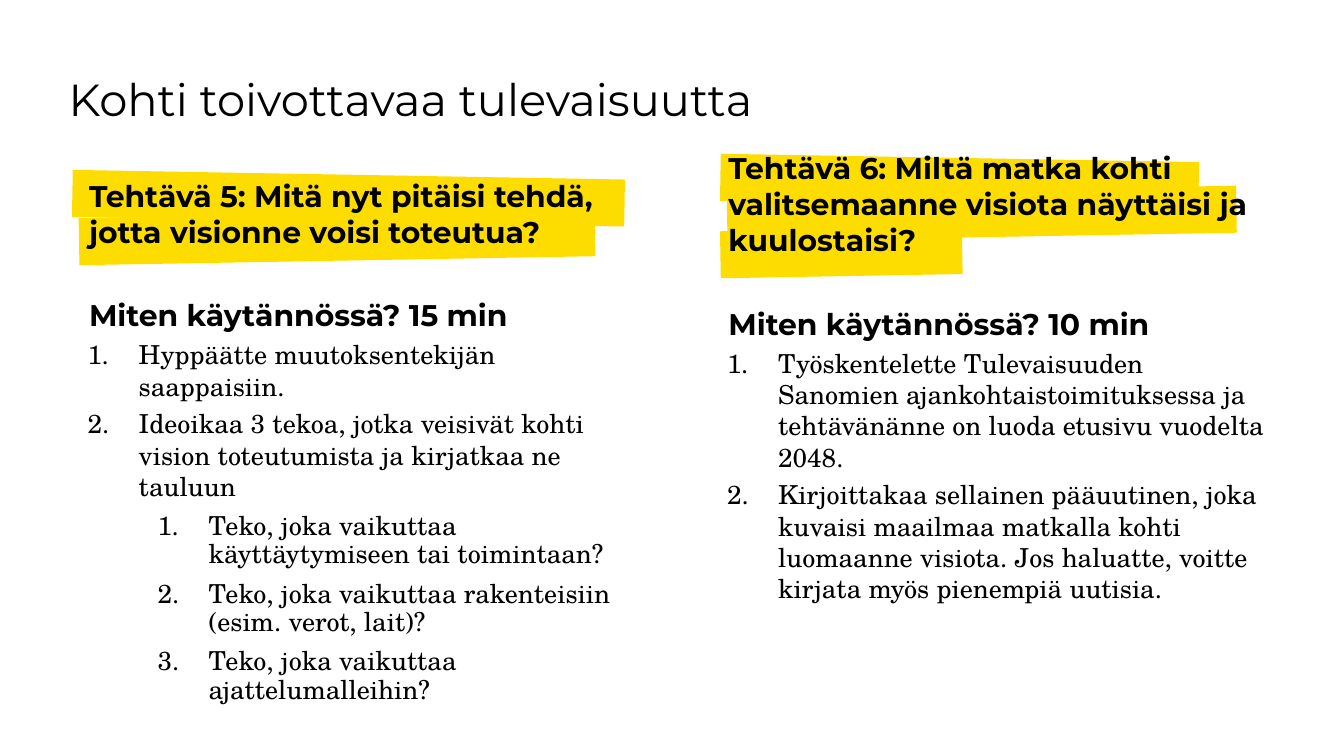
import pptx
import pptx.dml.color
import pptx.enum.shapes
import pptx.enum.text
import pptx.oxml.ns
import pptx.util
from lxml import etree

COLORS = {"text": "000000", "highlight": "FDDD00"}
# The grid has 100 columns; one cell is a tenth of an inch.
CELL = pptx.util.Inches(0.1)
COLUMNS, ROWS = 100, 56.25
STRIP_ROWS = 3.5

FONTS = {
    "title": {"name": "Montserrat", "size": pptx.util.Pt(24), "bold": False},
    "heading": {"name": "Montserrat", "size": pptx.util.Pt(16), "bold": True},
    "list": {"name": "TeX Gyre Schola", "size": pptx.util.Pt(14), "bold": False},
}
# Each style: font, left indent and hanging indent in inches, paragraph format
STYLES = {
    "task": ("heading", 0.14, 0, {}),
    "method": ("heading", 0.14, 0, {"space_before": pptx.util.Pt(25.7)}),
    "step": ("list", 0.51, -0.38, {"space_before": pptx.util.Pt(3.2)}),
    "substep": ("list", 1.03, -0.38, {
        "level": 1, "line_spacing": 0.9, "space_before": pptx.util.Pt(6)}),
}
FRAME = {"margin_left": 0, "margin_top": 0, "margin_right": 0,
         "margin_bottom": 0, "word_wrap": True}

# Strips: column and row offset in the box, width in columns, rotation
TASKS = [
    {
        "box": (52.8, 11.15, 41.3, 32.1),
        "strips": [(0.8, 5.9, 18, -1), (1.3, 3, 37.9, -1), (0.8, 0.6, 35.6, 1)],
        "text": [
            ("task", "Tehtävä 6: Miltä matka kohti valitsemaanne visiota "
                     "näyttäisi ja kuulostaisi?"),
            ("method", "Miten käytännössä? 10 min"),
            ("step", "Työskentelette Tulevaisuuden Sanomien ajankohtaistoimituksessa "
                     "ja tehtävänänne on luoda etusivu vuodelta 2048."),
            ("step", "Kirjoittakaa sellainen pääuutinen, joka kuvaisi maailmaa "
                     "matkalla kohti luomaanne visiota. Jos haluatte, voitte "
                     "kirjata myös pienempiä uutisia."),
        ],
    },
    {
        "box": (5.23, 13.2, 41.3, 38.2),
        "strips": [(0.65, 2.7, 38.4, -1), (0.15, -0.2, 41.1, 1)],
        "text": [
            ("task", "Tehtävä 5: Mitä nyt pitäisi tehdä, jotta visionne voisi toteutua?"),
            ("method", "Miten käytännössä? 15 min"),
            ("step", "Hyppäätte muutoksentekijän saappaisiin."),
            ("step", "Ideoikaa 3 tekoa, jotka veisivät kohti vision toteutumista "
                     "ja kirjatkaa ne tauluun"),
            ("substep", "Teko, joka vaikuttaa käyttäytymiseen tai toimintaan?"),
            ("substep", "Teko, joka vaikuttaa rakenteisiin (esim. verot, lait)?"),
            ("substep", "Teko, joka vaikuttaa ajattelumalleihin?"),
        ],
    },
]


def cells(*values):
    return [round(value * CELL) for value in values]


def color(name):
    return pptx.dml.color.RGBColor.from_string(COLORS[name])


def apply_format(target, values):
    for name, value in values.items():
        setattr(target, name, value)


def add_text(paragraph, text, font):
    run = paragraph.add_run()
    run.text = text
    apply_format(run.font, FONTS[font])
    run.font.color.rgb = color("text")


def number_paragraph(properties):
    bullet_color = etree.SubElement(properties, pptx.oxml.ns.qn("a:buClr"))
    etree.SubElement(bullet_color, pptx.oxml.ns.qn("a:srgbClr"), val=COLORS["text"])
    etree.SubElement(properties, pptx.oxml.ns.qn("a:buAutoNum"), type="arabicPeriod")


def place_title(title, box, text):
    left, top, width, height = cells(*box)
    apply_format(title, {"left": left, "top": top, "width": width, "height": height})
    apply_format(title.text_frame, FRAME | {
        "vertical_anchor": pptx.enum.text.MSO_ANCHOR.MIDDLE,
        "auto_size": pptx.enum.text.MSO_AUTO_SIZE.NONE})
    paragraph = title.text_frame.paragraphs[0]
    paragraph.alignment = pptx.enum.text.PP_ALIGN.LEFT
    add_text(paragraph, text, "title")


def add_task(slide, box, strips, text):
    # Highlighter strips behind the task heading
    for column, row, width, rotation in strips:
        strip = slide.shapes.add_shape(
            pptx.enum.shapes.MSO_SHAPE.RECTANGLE,
            *cells(box[0] + column, box[1] + row, width, STRIP_ROWS))
        strip.rotation = rotation
        strip.shadow.inherit = False
        strip.fill.solid()
        strip.fill.fore_color.rgb = color("highlight")
        strip.line.fill.background()

    # Heading and numbered instructions
    frame = slide.shapes.add_textbox(*cells(*box)).text_frame
    apply_format(frame, FRAME | {
        "auto_size": pptx.enum.text.MSO_AUTO_SIZE.SHAPE_TO_FIT_TEXT})
    for index, (style, words) in enumerate(text):
        font, indent, hanging, values = STYLES[style]
        paragraph = frame.add_paragraph() if index else frame.paragraphs[0]
        apply_format(paragraph, values)
        properties = paragraph._p.get_or_add_pPr()
        properties.set("marL", str(pptx.util.Inches(indent)))
        properties.set("indent", str(pptx.util.Inches(hanging)))
        if hanging:
            number_paragraph(properties)
        add_text(paragraph, words, font)


def main():
    presentation = pptx.Presentation()
    presentation.slide_width, presentation.slide_height = cells(COLUMNS, ROWS)
    slide = presentation.slides.add_slide(presentation.slide_layouts[5])
    place_title(slide.shapes.title, (5.1, 2.95, 89.8, 8.8),
                "Kohti toivottavaa tulevaisuutta")
    for task in TASKS:
        add_task(slide, **task)
    presentation.save("out.pptx")


if __name__ == "__main__":
    main()
